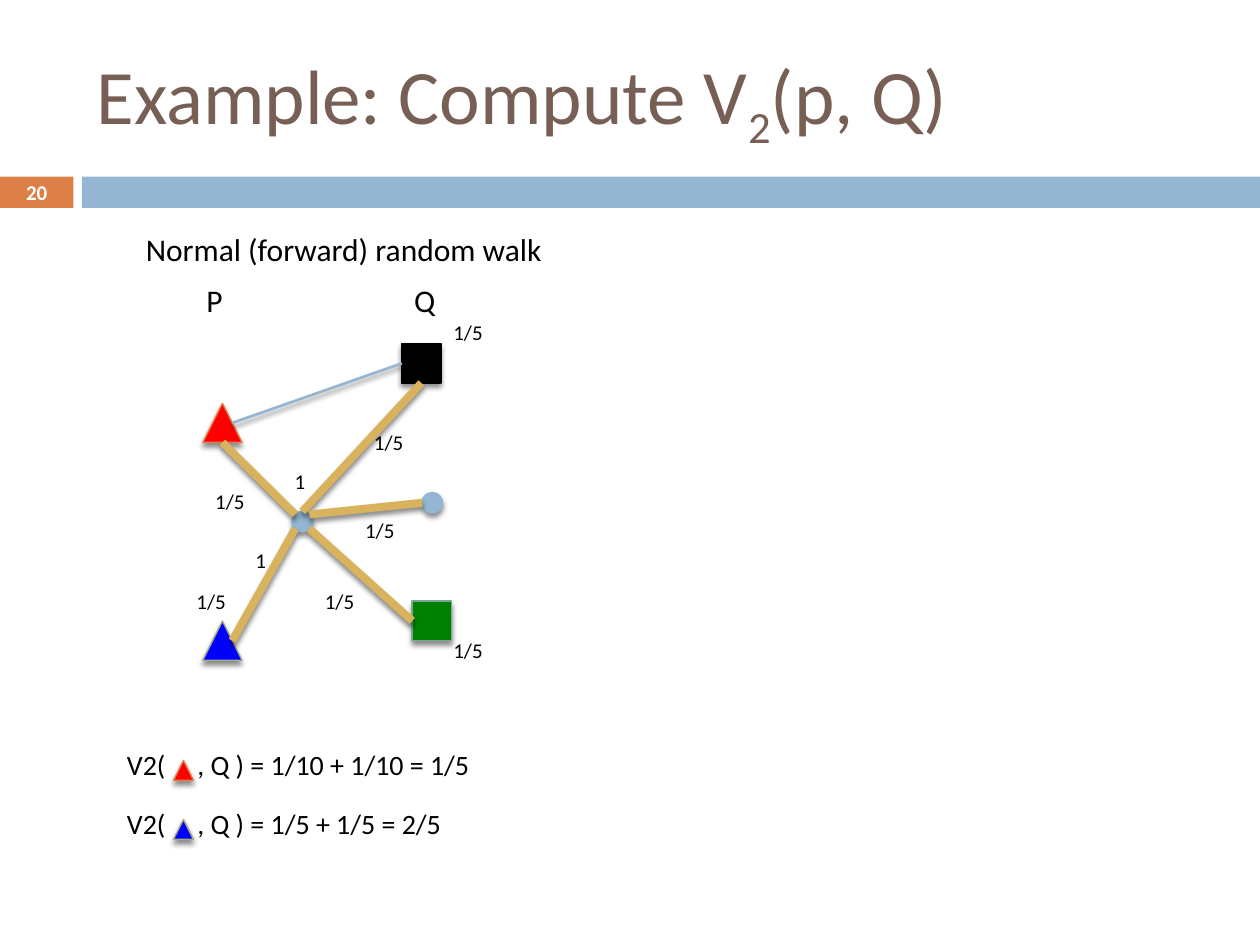
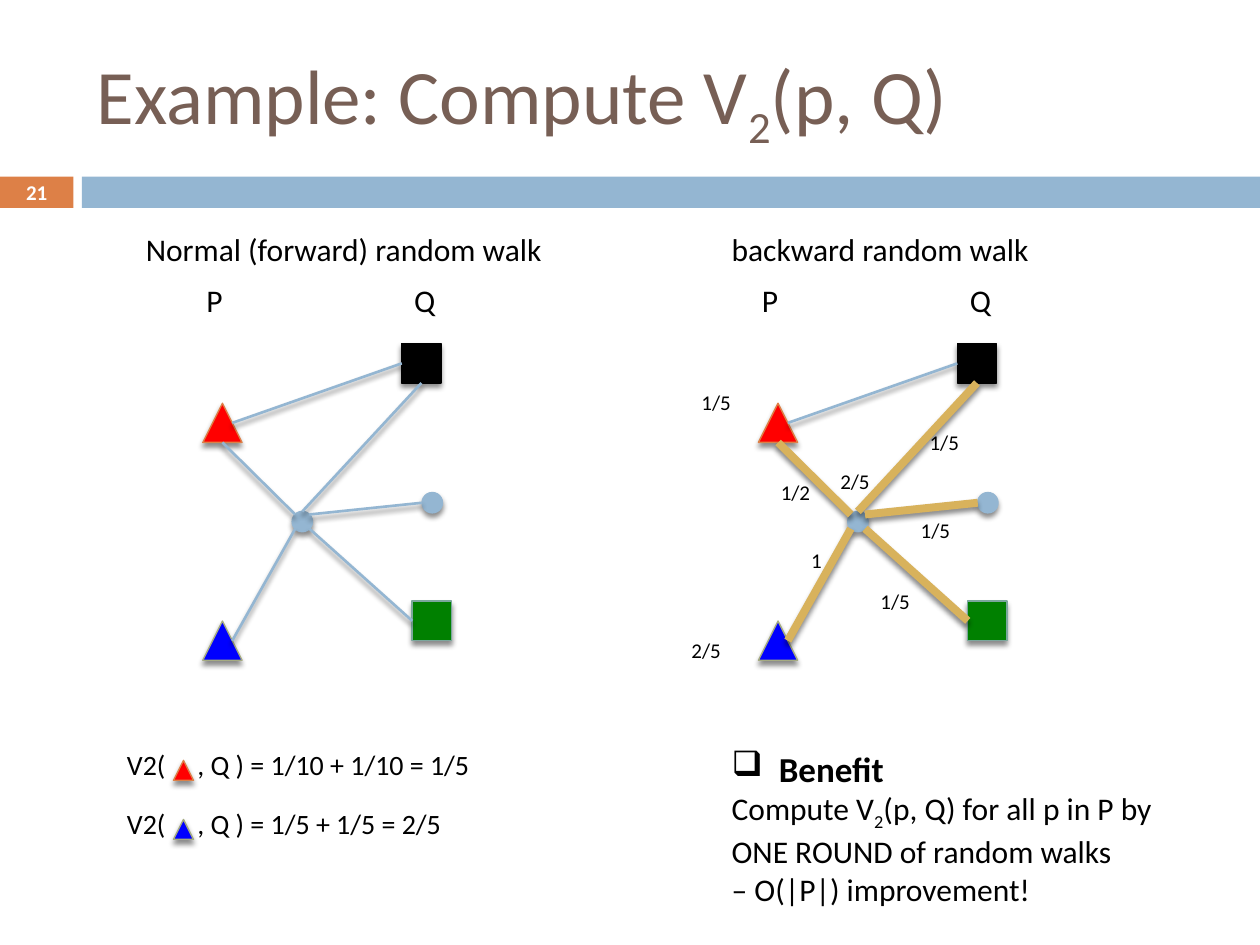
from lxml import etree
from pptx import Presentation
from pptx.dml.color import RGBColor
from pptx.enum import shapes, text
from pptx.oxml import parse_xml
from pptx.oxml import ns
from pptx.util import Cm, Pt

# Colours and font
FONT = "Calibri"
BLACK = RGBColor(0, 0, 0)
WHITE = RGBColor(255, 255, 255)
RED = RGBColor(255, 0, 0)
BLUE = RGBColor(0, 0, 255)
GREEN = RGBColor(0, 128, 0)
BROWN = RGBColor(0x77, 0x5F, 0x55)
ORANGE = RGBColor(0xDD, 0x80, 0x47)
SKY = RGBColor(0x94, 0xB6, 0xD2)
GOLD = RGBColor(0xD8, 0xB2, 0x5C)
OLIVE = RGBColor(0xA5, 0xAB, 0x81)
TEAL = RGBColor(0x7B, 0xA7, 0x9D)

RECT = shapes.MSO_SHAPE.RECTANGLE
TRI = shapes.MSO_SHAPE.ISOSCELES_TRIANGLE
OVAL = shapes.MSO_SHAPE.OVAL

# Content: lengths in cm, text between ~ marks is subscript
TITLE = "Example: Compute V~2~(p, Q)"
BIG, SMALL = 0.79, 0.41
SHIFT = 11.2  # from the forward graph to the backward graph

NODES = {  # name: kind, left, top, size, fill, line
    "black": (RECT, 8.1, 6.93, BIG, BLACK, BLACK),
    "blue": (TRI, 4.09, 12.52, BIG, BLUE, OLIVE),
    "red": (TRI, 4.09, 8.13, BIG, RED, ORANGE),
    "green": (RECT, 8.31, 12.12, BIG, GREEN, TEAL),
    "hub": (OVAL, 5.89, 10.31, SMALL, SKY, SKY),
    "dot": (OVAL, 8.51, 9.93, SMALL, SKY, SKY),
}
EDGES = [  # node and place on its box (across, down), at both ends
    ("red", (0.75, 0.5), "black", (0, 0.5)),
    ("red", (0.5, 1), "hub", (0.15, 0.15)),
    ("hub", (0.5, 0), "black", (0.5, 1)),
    ("hub", (0.85, 0.15), "dot", (0, 0.5)),
    ("hub", (0.85, 0.85), "green", (0, 0.5)),
    ("hub", (0.15, 0.85), "blue", (0.75, 0.5)),
]
SITES = {(0.5, 0): 0, (0, 0.5): 1, (0.5, 1): 2, (1, 0.5): 3}
HEADS = [("P", 3.91), ("Q", 8.1)]

# Weights: text, left, top
STEPS = [("1", 4.9, 10.92), ("1/5", 7.29, 8.53), ("1/5", 7.11, 10.31),
         ("1/5", 6.3, 11.73)]
AHEAD = STEPS + [("1/5", 4.09, 9.73), ("1/5", 8.89, 6.32), ("1/5", 8.89, 12.73),
                 ("1/5", 3.71, 11.73), ("1", 5.69, 9.32)]
BACK = STEPS + [("1/2", 4.29, 9.55), ("1/5", 2.69, 7.72), ("2/5", 2.49, 12.73),
                ("2/5", 5.49, 9.32)]

SUMS = [  # text, top, marker
    ("V2(\t, Q ) = 1/10 + 1/10 = 1/5", 14.94, "red"),
    ("V2(\t, Q ) = 1/5 + 1/5 = 2/5", 16.13, "blue"),
]
GAIN = ["Compute V~2~(p, Q) for all p in P by", "ONE ROUND of random walks",
        "– O(|P|) improvement!"]

AHEAD_NAME, BACK_NAME = "Normal (forward) random walk", "backward random walk"
SLIDES = [  # number, graphs (name, name left, shift, weights), benefit shown
    ("20", [(AHEAD_NAME, 2.69, 0, AHEAD)], False),
    ("21", [(AHEAD_NAME, 2.69, 0, []), (BACK_NAME, 14.5, SHIFT, BACK)], True),
]


def fill(par, words, size, color=BLACK, bold=False):
    for i, part in enumerate(words.split("~")):
        run = par.add_run()
        run.text = part
        font = run.font
        font.name, font.size, font.bold = FONT, Pt(size), bold
        font.color.rgb = color
        if i % 2:
            font._element.set("baseline", "-25000")


def write(page, words, x, y, w, h, size=18, color=BLACK, bold=False,
          align=text.PP_ALIGN.LEFT, middle=False):
    box = page.shapes.add_textbox(Cm(x), Cm(y), Cm(w), Cm(h))
    frame = box.text_frame
    frame.word_wrap = True
    if middle:
        frame.vertical_anchor = text.MSO_ANCHOR.MIDDLE
    else:
        frame.auto_size = text.MSO_AUTO_SIZE.SHAPE_TO_FIT_TEXT
    par = frame.paragraphs[0]
    par.alignment = align
    fill(par, words, size, color, bold)
    return frame


def shade(shape):
    shape._element.spPr.append(parse_xml(
        f'<a:effectLst {ns.nsdecls("a")}><a:outerShdw blurRad="38100" '
        'dist="30480" dir="5400000" rotWithShape="0"><a:srgbClr val="000000">'
        '<a:alpha val="45000"/></a:srgbClr></a:outerShdw></a:effectLst>'))


def mark(page, kind, x, y, size, color, edge):
    shape = page.shapes.add_shape(kind, Cm(x), Cm(y), Cm(size), Cm(size))
    shape.fill.solid()
    shape.fill.fore_color.rgb = color
    shape.line.color.rgb = edge
    shape.line.width = Pt(0.79)
    shade(shape)
    return shape


def band(page, x, w, color):
    bar = page.shapes.add_shape(RECT, Cm(x), Cm(3.56), Cm(w), Cm(0.63))
    bar.shadow.inherit = False
    bar.fill.solid()
    bar.fill.fore_color.rgb = color
    bar.line.fill.background()


def spot(name, place, shift):
    _, x, y, size, *_ = NODES[name]
    return Cm(x + shift + place[0] * size), Cm(y + place[1] * size)


def graph(page, shift, walked):
    made = {name: mark(page, kind, x + shift, *rest)
            for name, (kind, x, *rest) in NODES.items()}
    for i, (start, out, end, into) in enumerate(EDGES):
        line = page.shapes.add_connector(
            shapes.MSO_CONNECTOR.STRAIGHT,
            *spot(start, out, shift), *spot(end, into, shift))
        if NODES[end][0] == RECT:
            line.end_connect(made[end], SITES[into])
        bold = walked and i > 0
        line.line.color.rgb = GOLD if bold else SKY
        line.line.width = Pt(4.5 if bold else 1.5)
        shade(line)


def frame(page, number):
    band(page, 0, 1.48, ORANGE)
    band(page, 1.65, 23.75, SKY)
    write(page, TITLE, 1.7, 0.64, 22.66, 2.74, size=44, color=BROWN, middle=True)
    write(page, number, 0, 3.53, 1.48, 0.69, size=12, color=WHITE, bold=True,
          align=text.PP_ALIGN.CENTER, middle=True)


def sums(page):
    for words, y, name in SUMS:
        par = write(page, words, 2.31, y, 8.6, 0.94, size=16).paragraphs[0]
        tabs = etree.SubElement(par._p.get_or_add_pPr(), ns.qn("a:tabLst"))
        etree.SubElement(tabs, ns.qn("a:tab"), pos=str(Cm(1.42)), algn="l")
        kind, _, _, _, color, edge = NODES[name]
        mark(page, kind, 3.5, y + 0.39, 0.4, color, edge)


def gain(page):
    box = write(page, "Benefit", 14.5, 14.94, 10, 3.43, size=20, bold=True)
    props = box.paragraphs[0]._p.get_or_add_pPr()
    props.set("marL", str(Cm(0.95)))
    props.set("indent", str(-Cm(0.95)))
    etree.SubElement(props, ns.qn("a:buChar"), char="❑")
    for words in GAIN:
        fill(box.add_paragraph(), words, 18)


def main():
    deck = Presentation()
    deck.slide_width, deck.slide_height = Cm(25.4), Cm(19.05)
    for number, graphs, benefit in SLIDES:
        page = deck.slides.add_slide(deck.slide_layouts[6])
        frame(page, number)
        for name, left, shift, weights in graphs:
            write(page, name, left, 4.52, 9.2, 1.02)
            for head, x in HEADS:
                write(page, head, x + shift, 5.54, 1, 1.02)
            graph(page, shift, bool(weights))
            for words, x, y in weights:
                write(page, words, x + shift, y, 1.6, 0.76, size=12)
        sums(page)
        if benefit:
            gain(page)
    deck.save("out.pptx")


if __name__ == "__main__":
    main()
